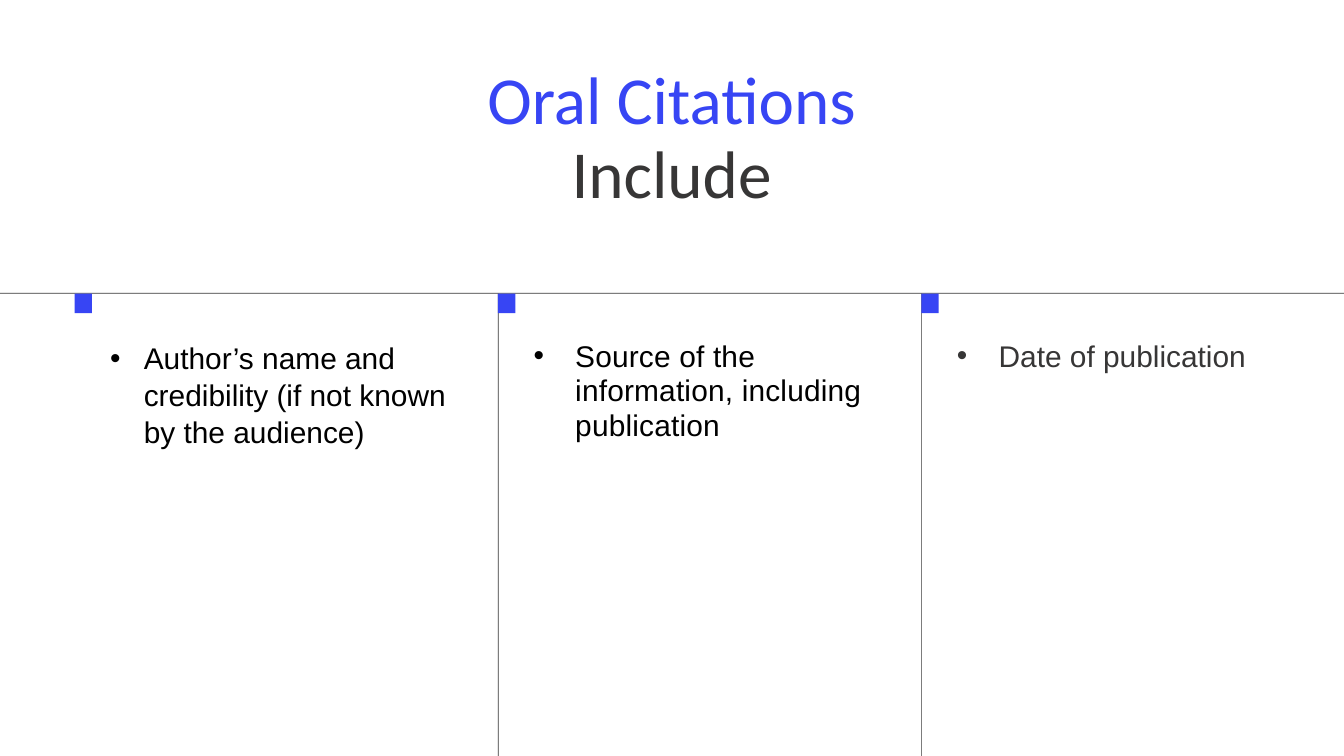
from dataclasses import dataclass
from lxml import etree
from pptx import Presentation, util as u
from pptx.dml.color import RGBColor
from pptx.enum import shapes, text
from pptx.oxml import ns


@dataclass(frozen=True)
class Theme:
    blue: str = "3745F4"
    dark: str = "373636"
    black: str = "000000"
    head: str = "Calibri"
    body: str = "Arial"
    big: int = 72
    small: int = 32


@dataclass(frozen=True)
class Point:
    words: str
    color: str
    lead: float
    dent: float
    tall: float
    track: int = 0  # letter spacing, hundredths of a point


T = Theme()
WIDE, HIGH = 20, 11.25
# Column grid
LEFT, STEP, PAD = 1.11, 6.3, 0.53
RULE, TOP, THIN = 4.36, 4.37, 0.01
POINTS = [
    Point("Author’s name and credibility (if not known by the audience)",
          T.black, 39.6, 0.5, 2.8),
    Point("Source of the information, including publication",
          T.black, 37, 0.62, 2.59, 20),
    Point("Date of publication", T.dark, 37, 0.62, 1.56),
]


def block(slide, x: float, y: float, w: float, h: float, color: str) -> None:
    box = slide.shapes.add_shape(shapes.MSO_SHAPE.RECTANGLE,
                                 *map(u.Inches, (x, y, w, h)))
    box.shadow.inherit = False
    box.fill.solid()
    box.fill.fore_color.rgb = RGBColor.from_string(color)
    box.line.fill.background()


def frame(slide, x: float, y: float, w: float, h: float):
    box = slide.shapes.add_textbox(*map(u.Inches, (x, y, w, h)))
    form = dict(margin_left=0, margin_top=0, margin_right=0, margin_bottom=0,
                word_wrap=True, vertical_anchor=text.MSO_ANCHOR.TOP)
    for key, val in form.items():
        setattr(box.text_frame, key, val)
    return box.text_frame.paragraphs[0]


def write(para, words: str, face: str, size: int, color: str):
    run = para.add_run()
    run.text = words
    for key, val in dict(name=face, size=u.Pt(size)).items():
        setattr(run.font, key, val)
    run.font.color.rgb = RGBColor.from_string(color)
    return run


def bullet(para, dent: float) -> None:
    props = para._p.get_or_add_pPr()
    props.set("marL", str(u.Inches(dent)))
    props.set("indent", str(-u.Inches(dent)))
    for tag, key, val in (("a:buFont", "typeface", T.body),
                          ("a:buChar", "char", "•")):
        etree.SubElement(props, ns.qn(tag)).set(key, val)


def column(slide, num: int, item: Point) -> None:
    x = LEFT + num * STEP
    if num:
        block(slide, x, TOP, THIN, HIGH - TOP, T.dark)
    block(slide, x, TOP, 0.26, 0.29, T.blue)
    para = frame(slide, x + PAD, 5.04, 5.24, item.tall)
    para.line_spacing = u.Pt(item.lead)
    bullet(para, item.dent)
    run = write(para, item.words, T.body, T.small, item.color)
    if item.track:
        run.font._element.set("spc", str(item.track))


def main() -> None:
    deck = Presentation()
    deck.slide_width, deck.slide_height = u.Inches(WIDE), u.Inches(HIGH)
    slide = deck.slides.add_slide(deck.slide_layouts[6])

    # Title
    para = frame(slide, 3.83, 0.96, 12.33, 2.22)
    para.alignment = text.PP_ALIGN.CENTER
    para.line_spacing = u.Pt(79.2)
    write(para, "Oral Citations", T.head, T.big, T.blue)
    para.add_line_break()
    write(para, "Include", T.head, T.big, T.dark)

    # Rule and columns
    block(slide, 0, RULE, WIDE, THIN, T.dark)
    for num, item in enumerate(POINTS):
        column(slide, num, item)
    deck.save("out.pptx")


if __name__ == "__main__":
    main()
